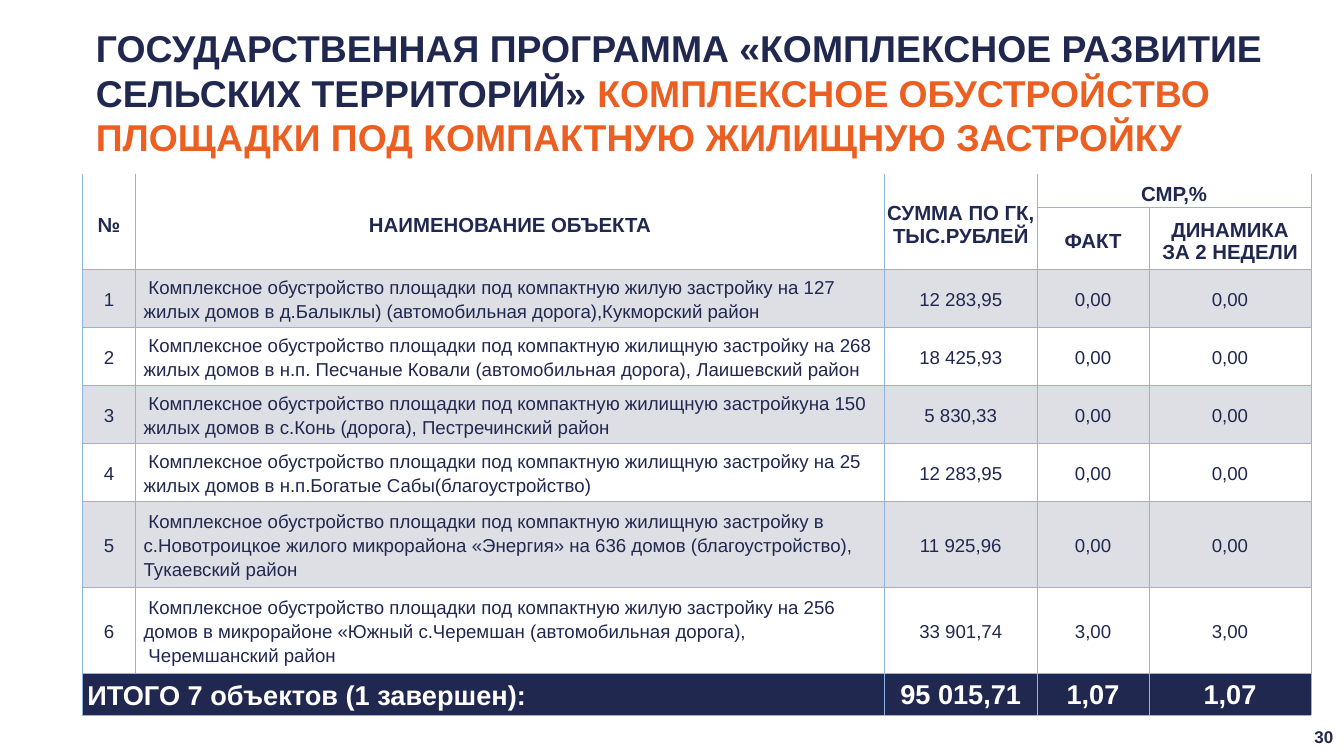
from dataclasses import dataclass

from lxml.etree import SubElement
from pptx import Presentation
from pptx.dml.color import RGBColor
from pptx.enum.shapes import MSO_SHAPE as Shape
from pptx.enum.text import MSO_ANCHOR as Anchor, PP_ALIGN as Align
from pptx.oxml.ns import qn
from pptx.util import Inches, Pt


@dataclass(frozen=True)
class Theme:
    """Colours, font and type sizes of the slide."""
    font: str = "Arial"
    navy: str = "212850"
    orange: str = "EB6022"
    white: str = "FFFFFF"
    band: str = "DEDFE5"
    grid: str = "8EB4E3"
    title: int = 44
    total: int = 32
    header: int = 24
    body: int = 22
    number: int = 20


THEME = Theme()
COLUMN_WIDTHS = [0.87, 12.25, 2.5, 1.83, 2.65]
ROW_HEIGHTS = [0.55, 1, 0.95, 0.95, 0.95, 0.95, 1.41, 1.41, 0.68]
TITLE = [
    [("ГОСУДАРСТВЕННАЯ ПРОГРАММА «КОМПЛЕКСНОЕ РАЗВИТИЕ СЕЛЬСКИХ ТЕРРИТОРИЙ» ", THEME.navy),
     ("КОМПЛЕКСНОЕ ОБУСТРОЙСТВО", THEME.orange)],
    [("ПЛОЩАДКИ ПОД КОМПАКТНУЮ ЖИЛИЩНУЮ ЗАСТРОЙКУ", THEME.orange)],
]
HEADERS = [
    (0, 0, "№", 0.12),
    (0, 1, "НАИМЕНОВАНИЕ ОБЪЕКТА", 0.12),
    (0, 2, "СУММА ПО ГК,\nТЫС.РУБЛЕЙ", 0.1),
    (0, 3, "СМР,%", 0.1),
    (1, 3, "ФАКТ", 0.1),
    (1, 4, "ДИНАМИКА\nЗА 2 НЕДЕЛИ", 0.1),
]
PROJECTS = [
    ("Комплексное обустройство площадки под компактную жилую застройку на 127 жилых домов "
     "в д.Балыклы) (автомобильная дорога),Кукморский район", "12 283,95", "0,00", "0,00"),
    ("Комплексное обустройство площадки под компактную жилищную застройку на 268 жилых домов "
     "в н.п. Песчаные Ковали (автомобильная дорога), Лаишевский район",
     "18 425,93", "0,00", "0,00"),
    ("Комплексное обустройство площадки под компактную жилищную застройкуна 150 жилых домов "
     "в с.Конь (дорога), Пестречинский район", "5 830,33", "0,00", "0,00"),
    ("Комплексное обустройство площадки под компактную жилищную застройку на 25 жилых домов "
     "в н.п.Богатые Сабы(благоустройство)", "12 283,95", "0,00", "0,00"),
    ("Комплексное обустройство площадки под компактную жилищную застройку в с.Новотроицкое "
     "жилого микрорайона «Энергия» на 636 домов (благоустройство), Тукаевский район",
     "11 925,96", "0,00", "0,00"),
    ("Комплексное обустройство площадки под компактную жилую застройку на 256 домов "
     "в микрорайоне «Южный с.Черемшан (автомобильная дорога),\nЧеремшанский район",
     "33 901,74", "3,00", "3,00"),
]
TOTALS = [(0, "ИТОГО 7 объектов (1 завершен):"), (2, "95 015,71"), (3, "1,07"), (4, "1,07")]


def style_font(font, size, colour, bold):
    """Apply the theme font with a size, colour and weight."""
    font.name, font.size, font.bold = THEME.font, Pt(size), bold
    font.color.rgb = RGBColor.from_string(colour)


def set_margins(holder, left, top, right, bottom):
    """Set the inner margins of a cell or text frame in inches."""
    holder.margin_left, holder.margin_top = Inches(left), Inches(top)
    holder.margin_right, holder.margin_bottom = Inches(right), Inches(bottom)


def frame_cell(cell, fill, sides="LRTB"):
    """Draw the grid lines on the given sides of a cell and fill it."""
    properties = cell._tc.get_or_add_tcPr()
    for side in "LRTB":
        line = SubElement(properties, qn(f"a:ln{side}"), w=str(Pt(1)))
        if side in sides:
            paint = SubElement(line, qn("a:solidFill"))
            SubElement(paint, qn("a:srgbClr"), val=THEME.grid)
        else:
            SubElement(line, qn("a:noFill"))
    cell.fill.solid()
    cell.fill.fore_color.rgb = RGBColor.from_string(fill)


def write_cell(cell, text, size, colour, bold, margins, align=Align.CENTER, spacing=None,
               indents=(0, 0)):
    """Write and format the paragraphs of a cell."""
    cell.vertical_anchor = Anchor.MIDDLE
    set_margins(cell, *margins)
    cell.text_frame.text = text
    for paragraph in cell.text_frame.paragraphs:
        paragraph.alignment = align
        if spacing:
            paragraph.line_spacing = spacing
        if any(indents):
            layout = paragraph._p.get_or_add_pPr()
            layout.set("marL", str(Inches(indents[0])))
            layout.set("indent", str(Inches(indents[1])))
        for run in paragraph.runs:
            style_font(run.font, size, colour, bold)


def add_title(slide, left, top, width, height):
    """Add the two-colour programme title."""
    frame = slide.shapes.add_textbox(
        Inches(left), Inches(top), Inches(width), Inches(height)).text_frame
    frame.word_wrap = True
    set_margins(frame, 0, 0.02, 0, 0)
    for index, parts in enumerate(TITLE):
        paragraph = frame.add_paragraph() if index else frame.paragraphs[0]
        for text, colour in parts:
            run = paragraph.add_run()
            run.text = text
            style_font(run.font, THEME.title, colour, True)


def add_projects_table(slide, left, top, width, height):
    """Add the table of projects with its headers and totals."""
    table = slide.shapes.add_table(
        len(ROW_HEIGHTS), len(COLUMN_WIDTHS),
        Inches(left), Inches(top), Inches(width), Inches(height)).table
    table.first_row = table.horz_banding = False
    for column, column_width in zip(table.columns, COLUMN_WIDTHS):
        column.width = Inches(column_width)
    last = len(ROW_HEIGHTS) - 1
    for index, (row, row_height) in enumerate(zip(table.rows, ROW_HEIGHTS)):
        row.height = Inches(row_height)
        banded = index >= 2 and index % 2 == 0
        fill = THEME.navy if index == last else THEME.band if banded else THEME.white
        for cell in row.cells:
            frame_cell(cell, fill, "LRTB" if index else "LRB")
    for column in range(3):
        table.cell(0, column).merge(table.cell(1, column))
    table.cell(0, 3).merge(table.cell(0, 4))
    table.cell(last, 0).merge(table.cell(last, 1))

    for row, column, text, inset in HEADERS:
        write_cell(table.cell(row, column), text, THEME.header, THEME.navy, True,
                   (0, inset, 0, 0))
    for number, project in enumerate(PROJECTS, 1):
        for column, text in enumerate((str(number), *project)):
            is_name = column == 1
            write_cell(table.cell(number + 1, column), text, THEME.body, THEME.navy, False,
                       (0.01, 0.01, 0.01, 0), Align.LEFT if is_name else Align.CENTER, 1.15,
                       (0.12, 0.08) if is_name else (0, 0))
    for column, text in TOTALS:
        is_label = column == 0
        write_cell(table.cell(last, column), text, THEME.total, THEME.white, True,
                   (0.08, 0, 0, 0) if is_label else (0.02, 0.02, 0.02, 0),
                   Align.LEFT if is_label else Align.CENTER, 1.15 if is_label else None)


def add_page_number(slide, left, top, width, height):
    """Add the page number in the corner."""
    badge = slide.shapes.add_shape(
        Shape.ROUNDED_RECTANGLE, Inches(left), Inches(top), Inches(width), Inches(height))
    badge.shadow.inherit = False
    badge.fill.background()
    badge.line.fill.background()
    frame = badge.text_frame
    frame.vertical_anchor = Anchor.MIDDLE
    set_margins(frame, 0.1, 0.05, 0.1, 0.05)
    frame.text = "30"
    frame.paragraphs[0].alignment = Align.CENTER
    style_font(frame.paragraphs[0].runs[0].font, THEME.number, THEME.navy, True)


def main():
    """Build and save the slide."""
    deck = Presentation()
    deck.slide_width, deck.slide_height = Inches(21.99), Inches(12.37)
    slide = deck.slides.add_slide(deck.slide_layouts[6])
    add_page_number(slide, 21.3, 11.76, 0.72, 0.59)
    add_title(slide, 1.57, 0.39, 19.86, 2.24)
    add_projects_table(slide, 1.35, 2.85, 20.1, 8.83)
    deck.save("out.pptx")


if __name__ == "__main__":
    main()
